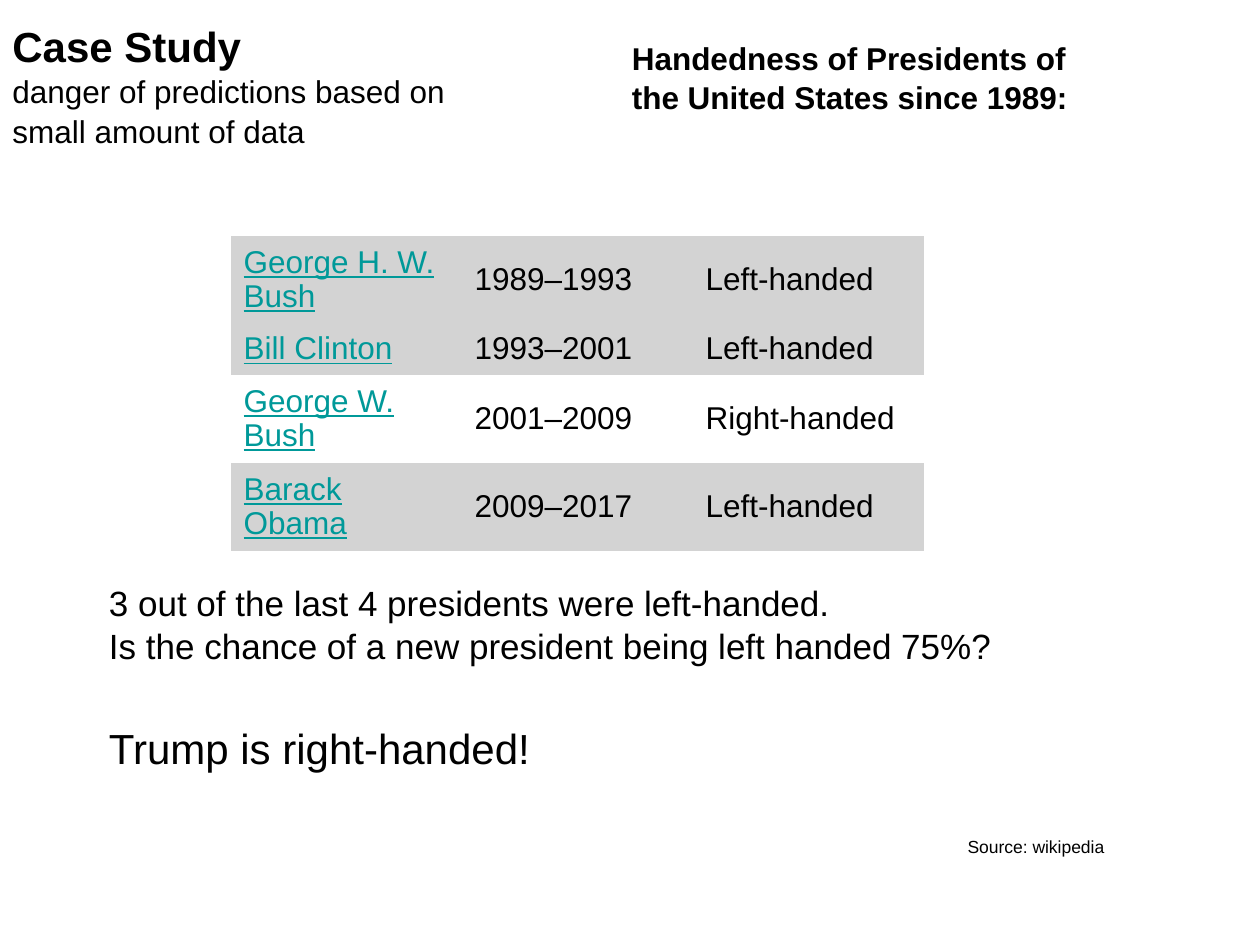
"""Build the case study slide on the handedness of presidents."""
from pptx import Presentation
from pptx.dml.color import RGBColor
from pptx.enum.text import MSO_ANCHOR
from pptx.util import Pt

MIDDLE, TOP = MSO_ANCHOR.MIDDLE, MSO_ANCHOR.TOP
FONT = "Arial"
COLORS = {"text": "000000", "link": "009999", "left": "D3D3D3"}
NO_STYLE = "{2D5ABB26-0587-4C30-8999-92F81FD0307C}"

TEXT_BOXES = [
    {"at": (0, 18, 294, 72), "anchor": MIDDLE, "bottom": 15.6,
     "lines": [("Case Study", 24, True),
               ("danger of predictions based on small amount of data", 18, False)]},
    {"at": (354, 18, 282, 51),
     "lines": [("Handedness of Presidents of the United States since 1989:", 18, True)]},
    {"at": (55.2, 327.6, 623, 55.4),
     "lines": [("3 out of the last 4 presidents were left-handed.", 20, False),
               ("Is the chance of a new president being left handed 75%?", 20, False)]},
    {"at": (55.2, 408.2, 545, 36),
     "lines": [("Trump is right-handed!", 24, False)]},
    {"at": (545.8, 473.8, 132, 19.4),
     "lines": [("Source: wikipedia", 10, False)]},
]
PRESIDENTS = [
    ("George H. W. Bush", "1989–1993", "Left-handed"),
    ("Bill Clinton", "1993–2001", "Left-handed"),
    ("George W. Bush", "2001–2009", "Right-handed"),
    ("Barack Obama", "2009–2017", "Left-handed"),
]
TABLE_LEFT, TABLE_TOP, COLUMN_WIDTH = 132, 135, 132
ROW_HEIGHTS = [50.4, 28.8, 50.4, 50.4]


def add_text(paragraph, text, size, color="text", bold=False, underline=False, spacing=1.04):
    paragraph.line_spacing = spacing
    run = paragraph.add_run()
    run.text = text
    font = run.font
    font.name, font.size, font.bold, font.underline = FONT, Pt(size), bold, underline
    font.color.rgb = RGBColor.from_string(COLORS[color])


def add_text_box(slide, box):
    frame = slide.shapes.add_textbox(*map(Pt, box["at"])).text_frame
    frame.word_wrap = True
    frame.vertical_anchor = box.get("anchor", TOP)
    frame.margin_bottom = Pt(box.get("bottom", 3.6))
    for index, (text, size, bold) in enumerate(box["lines"]):
        paragraph = frame.add_paragraph() if index else frame.paragraphs[0]
        add_text(paragraph, text, size, bold=bold)


def add_president_table(slide):
    column_count = len(PRESIDENTS[0])
    shape = slide.shapes.add_table(
        len(PRESIDENTS), column_count, Pt(TABLE_LEFT), Pt(TABLE_TOP),
        Pt(COLUMN_WIDTH * column_count), Pt(sum(ROW_HEIGHTS)))
    shape.element.xpath(".//a:tableStyleId")[0].text = NO_STYLE
    table = shape.table
    table.first_row = table.horz_banding = False
    for row, height, president in zip(table.rows, ROW_HEIGHTS, PRESIDENTS):
        row.height = Pt(height)
        for column, (cell, text) in enumerate(zip(row.cells, president)):
            cell.vertical_anchor = MIDDLE
            if president[-1] == "Left-handed":
                cell.fill.solid()
                cell.fill.fore_color.rgb = RGBColor.from_string(COLORS["left"])
            else:
                cell.fill.background()
            is_name = column == 0
            add_text(cell.text_frame.paragraphs[0], text, 18,
                     "link" if is_name else "text", underline=is_name, spacing=0.97)


def main():
    presentation = Presentation()
    presentation.slide_width, presentation.slide_height = Pt(720), Pt(540)
    slide = presentation.slides.add_slide(presentation.slide_layouts[6])
    for box in TEXT_BOXES:
        add_text_box(slide, box)
    add_president_table(slide)
    presentation.save("out.pptx")


if __name__ == "__main__":
    main()
